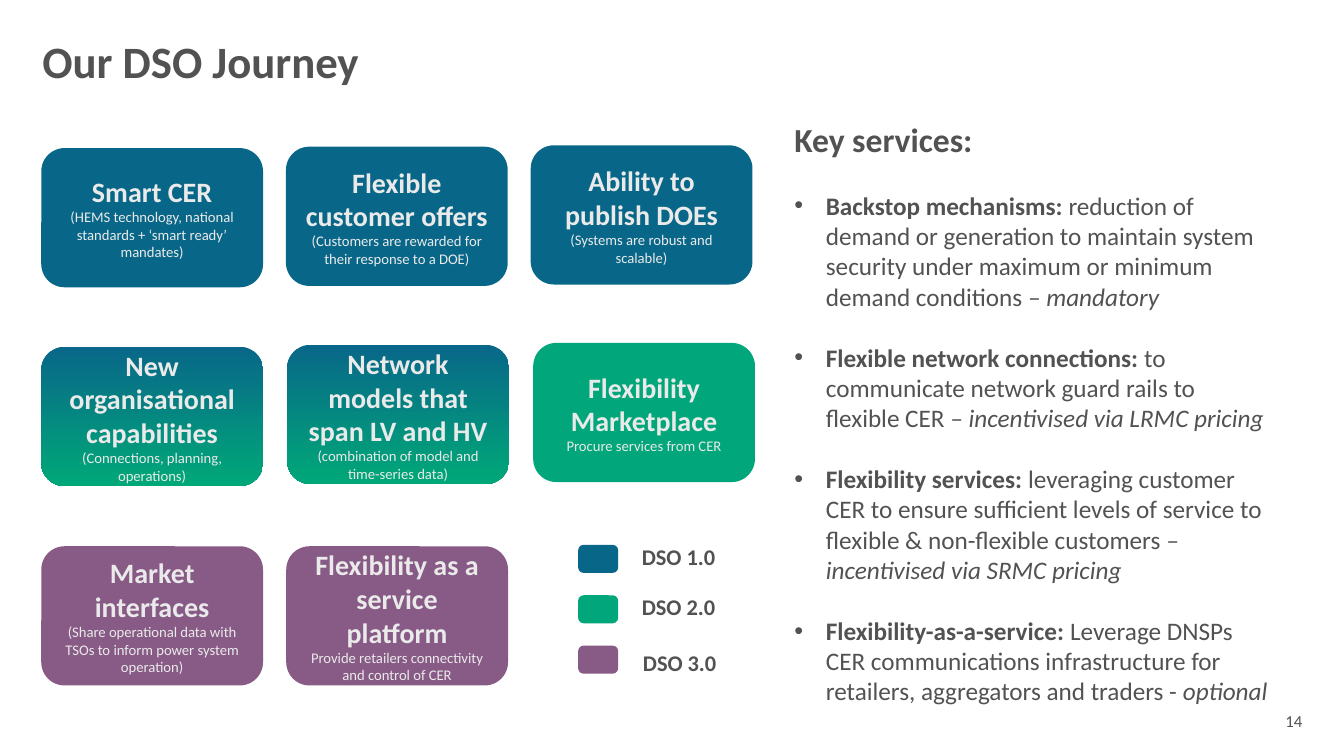
from lxml import etree
from pptx import Presentation
from pptx.dml.color import RGBColor
from pptx.enum import shapes, text
from pptx.oxml import ns
from pptx.util import Pt

GREY = RGBColor(0x52, 0x52, 0x52)
PALE = RGBColor(0xEA, 0xEA, 0xEA)
BLUE = RGBColor(0x08, 0x67, 0x88)
GREEN = RGBColor(0x01, 0xA7, 0x7B)
GRADIENT_GREEN = RGBColor(0x00, 0xA8, 0x78)
PURPLE = RGBColor(0x88, 0x5A, 0x86)
BLEND = (BLUE, GRADIENT_GREEN)

CARD_WIDTH, CARD_HEIGHT = 158.4, 99.4

# Row top, column pitch, rise per column, cards (fill, heading, detail)
CARD_ROWS = [
    (105.8, 174.8, 1, [
        (BLUE, "Smart CER", "(HEMS technology, national standards + ‘smart ready’ mandates)"),
        (BLUE, "Flexible customer offers", "(Customers are rewarded for their response to a DOE)"),
        (BLUE, "Ability to publish DOEs", "(Systems are robust and scalable)"),
    ]),
    (247.7, 175.7, 1.4, [
        (BLEND, "New organisational capabilities", "(Connections, planning, operations)"),
        (BLEND, "Network models that span LV and HV", "(combination of model and time-series data)"),
        (GREEN, "Flexibility Marketplace", "Procure services from CER"),
    ]),
    (390.2, 175, 0, [
        (PURPLE, "Market interfaces",
         "(Share operational data with TSOs to inform power system operation)"),
        (PURPLE, "Flexibility as a service platform", "Provide retailers connectivity and control of CER"),
    ]),
]

# Colour, stage, label offset from the legend row
LEGEND = [
    (BLUE, "DSO 1.0", (37.4, -5.8)),
    (GREEN, "DSO 2.0", (37.4, -5.8)),
    (PURPLE, "DSO 3.0", (38.2, -2.2)),
]

SERVICES = [
    ("Backstop mechanisms: ",
     "reduction of demand or generation to maintain system security under maximum or minimum demand conditions ",
     "– mandatory"),
    ("Flexible network connections: ",
     "to communicate network guard rails to flexible CER ",
     "– incentivised via LRMC pricing"),
    ("Flexibility services: ",
     "leveraging customer CER to ensure sufficient levels of service to flexible & non-flexible customers ",
     "– incentivised via SRMC pricing"),
    ("Flexibility-as-a-service: ",
     "Leverage DNSPs CER communications infrastructure for retailers, aggregators and traders - ",
     "optional"),
]


def place(part, left, top, width, height):
    part.left, part.top, part.width, part.height = Pt(left), Pt(top), Pt(width), Pt(height)


def style(font, size, color=GREY, bold=None):
    font.name, font.size, font.bold = "Calibri", Pt(size), bold
    font.color.rgb = color


def set_bullet(paragraph, indent=0, char=None):
    """Give the paragraph a hanging bullet, or none when char is missing."""
    properties = paragraph._p.get_or_add_pPr()
    properties.set("marL", str(Pt(indent)))
    properties.set("indent", str(-Pt(indent)))
    if char:
        etree.SubElement(properties, ns.qn("a:buFont"), typeface="Arial")
        etree.SubElement(properties, ns.qn("a:buChar"), char=char)
    else:
        etree.SubElement(properties, ns.qn("a:buNone"))


def rounded_box(slide, left, top, width, height):
    box = slide.shapes.add_shape(
        shapes.MSO_SHAPE.ROUNDED_RECTANGLE, Pt(left), Pt(top), Pt(width), Pt(height))
    box.shadow.inherit = False
    return box


def fill_title(title, left, top, width, height):
    place(title, left, top, width, height)
    frame = title.text_frame
    frame.auto_size = text.MSO_AUTO_SIZE.NONE
    frame.vertical_anchor = text.MSO_ANCHOR.TOP
    frame.margin_left = frame.margin_top = frame.margin_right = frame.margin_bottom = 0
    heading = frame.paragraphs[0]
    heading.text = "Our DSO Journey"
    heading.alignment = text.PP_ALIGN.LEFT
    heading.line_spacing = Pt(31)
    style(heading.font, 32, bold=True)


def fill_services(body, left, top, width, height):
    place(body, left, top, width, height)
    frame = body.text_frame
    frame.auto_size = text.MSO_AUTO_SIZE.NONE
    heading = frame.paragraphs[0]
    heading.text = "Key services:"
    heading.space_before = Pt(0)
    set_bullet(heading)
    style(heading.font, 24, bold=True)
    for name, description, terms in SERVICES:
        service = frame.add_paragraph()
        service.space_before = Pt(22)
        set_bullet(service, 22.5, "•")
        style(service.font, 18)
        for words, bold, italic in ((name, True, None), (description, None, None), (terms, None, True)):
            run = service.add_run()
            run.text = words
            run.font.bold, run.font.italic = bold, italic


def add_card(slide, left, top, fill, heading, detail):
    card = rounded_box(slide, left, top, CARD_WIDTH, CARD_HEIGHT)
    card.line.fill.background()
    if fill is BLEND:
        card.fill.gradient()
        card.fill.gradient_angle = 270
        for stop, color in zip(card.fill.gradient_stops, BLEND):
            stop.color.rgb = color
    else:
        card.fill.solid()
        card.fill.fore_color.rgb = fill
    frame = card.text_frame
    frame.word_wrap = True
    frame.vertical_anchor = text.MSO_ANCHOR.MIDDLE
    frame.text = f"{heading}\n{detail}"
    for paragraph, size, bold in zip(frame.paragraphs, (20, 10.5), (True, False)):
        paragraph.alignment = text.PP_ALIGN.CENTER
        style(paragraph.font, size, PALE, bold)


def add_cards(slide, left):
    for top, pitch, rise, cards in CARD_ROWS:
        for column, card in enumerate(cards):
            add_card(slide, left + column * pitch, top - column * rise, *card)


def add_legend(slide, left, top, pitch):
    for row, (color, stage, (shift_x, shift_y)) in enumerate(LEGEND):
        row_top = top + row * pitch
        swatch = rounded_box(slide, left, row_top, 26.6, 18)
        swatch.fill.solid()
        swatch.fill.fore_color.rgb = color
        swatch.line.color.rgb = color
        swatch.line.width = Pt(2)
        label = slide.shapes.add_textbox(
            Pt(left + shift_x), Pt(row_top + shift_y), Pt(67.7), Pt(26.6))
        label.text_frame.word_wrap = False
        label.text_frame.text = stage
        style(label.text_frame.paragraphs[0].font, 16, bold=True)


def add_page_number(slide, left, top, width, height):
    number = slide.shapes.add_textbox(Pt(left), Pt(top), Pt(width), Pt(height))
    frame = number.text_frame
    frame.word_wrap = True
    frame.margin_left = frame.margin_right = frame.margin_bottom = 0
    frame.margin_top = Pt(2)
    frame.text = "14"
    frame.paragraphs[0].alignment = text.PP_ALIGN.RIGHT
    style(frame.paragraphs[0].font, 12)


def main():
    deck = Presentation()
    deck.slide_width, deck.slide_height = Pt(960), Pt(540)
    slide = deck.slides.add_slide(deck.slide_layouts[1])
    fill_title(slide.shapes.title, 30.2, 31.7, 617.8, 70.6)
    fill_services(slide.placeholders[1], 560.2, 81.4, 353.5, 494.6)
    add_cards(slide, 29.5)
    add_legend(slide, 414, 390.2, 36)
    add_page_number(slide, 889.9, 505.4, 40.3, 28.8)
    deck.save("out.pptx")


if __name__ == "__main__":
    main()
